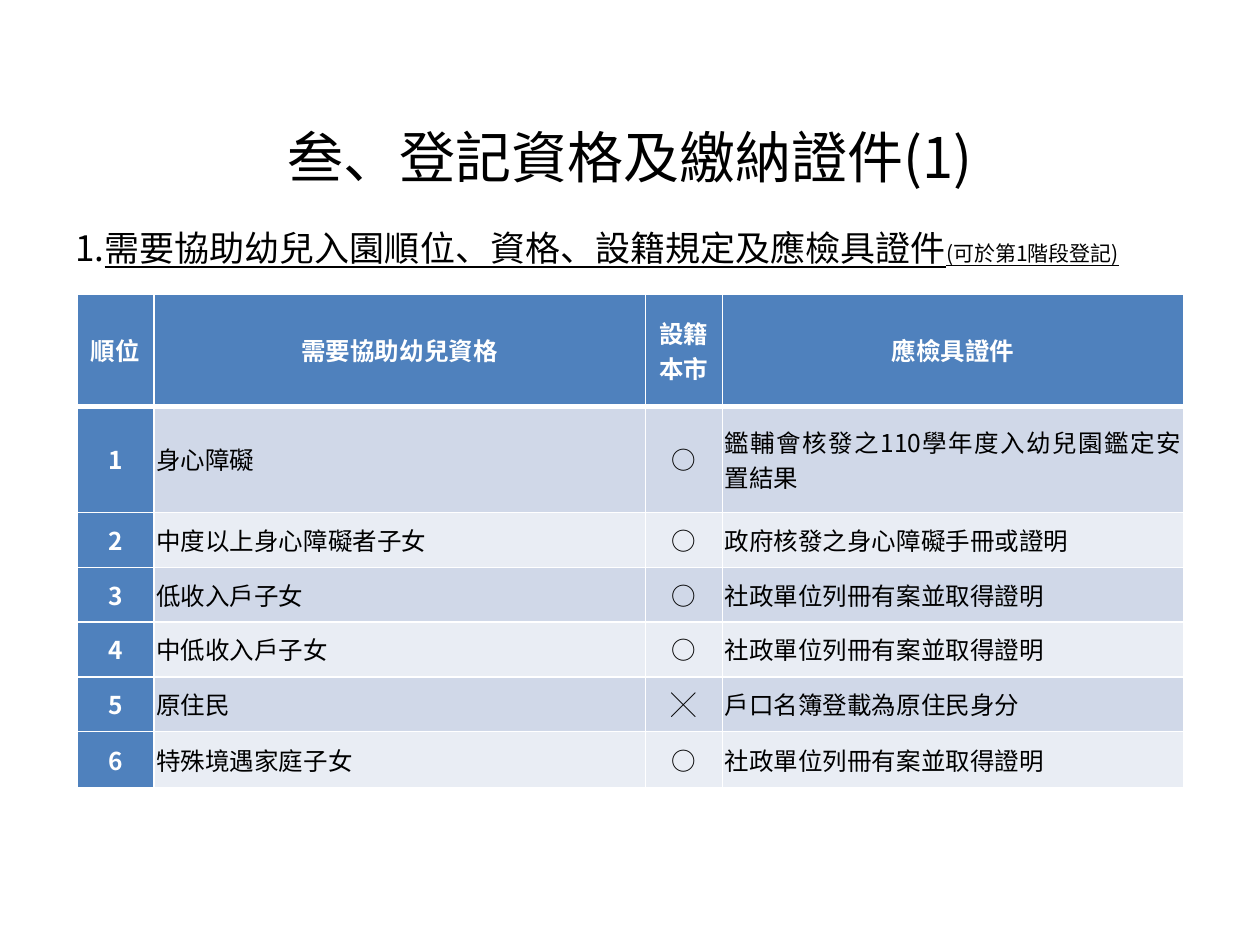
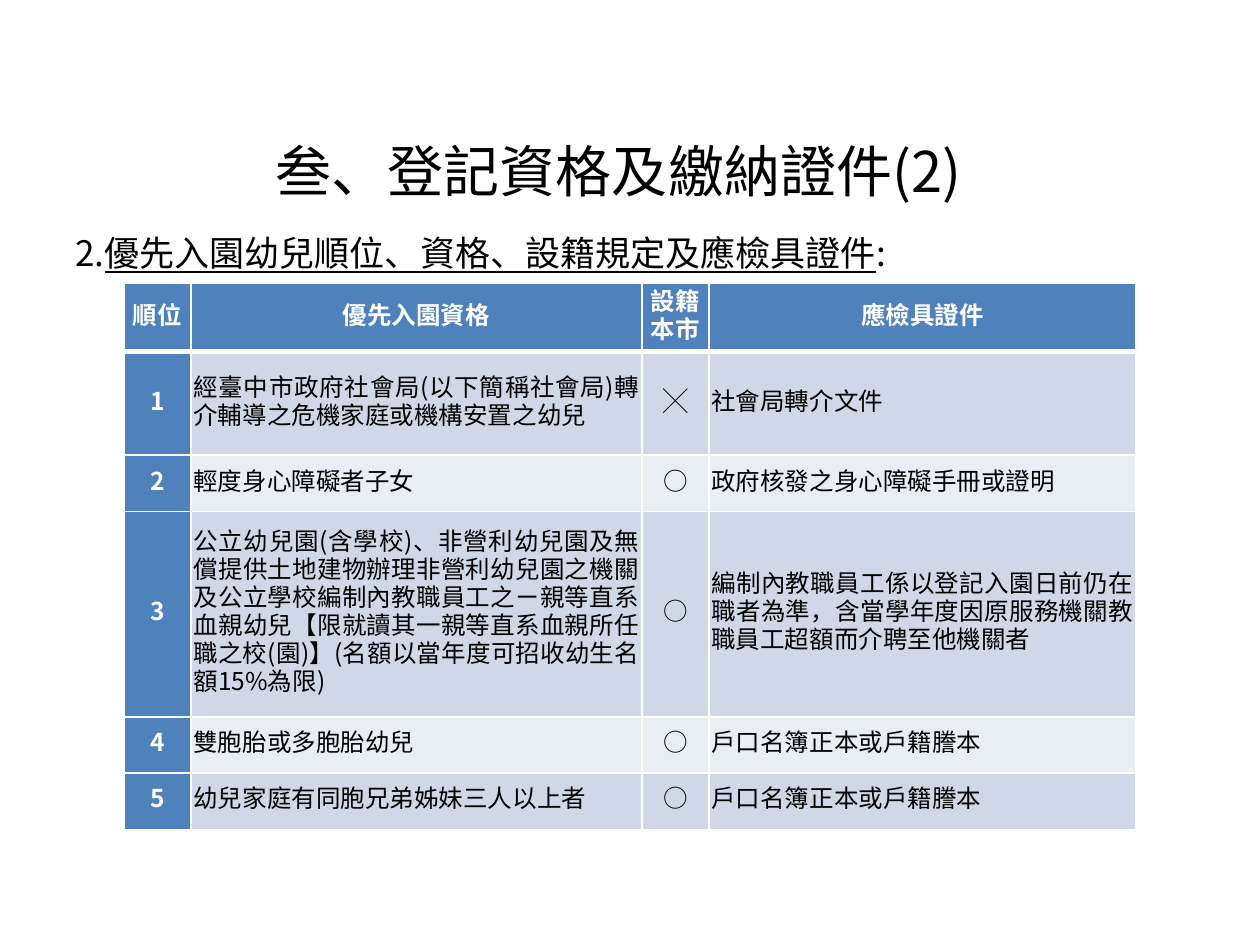
"""Build two slides listing kindergarten enrolment priorities and required documents."""
import lxml.etree
import pptx
import pptx.dml.color
import pptx.enum.text
import pptx.oxml.ns
import pptx.util

Cm = pptx.util.Cm
Pt = pptx.util.Pt
CENTER = pptx.enum.text.PP_ALIGN.CENTER
JUSTIFY = pptx.enum.text.PP_ALIGN.JUSTIFY
LEFT = pptx.enum.text.PP_ALIGN.LEFT
MIDDLE = pptx.enum.text.MSO_ANCHOR.MIDDLE
TOP = pptx.enum.text.MSO_ANCHOR.TOP
qn = pptx.oxml.ns.qn

FONT = "Noto Sans CJK SC"
BLACK, WHITE, BLUE = "000000", "FFFFFF", "4F81BD"
BANDS = ["E9EDF4", "D0D8E8"]


def color(hex_code):
    return pptx.dml.color.RGBColor.from_string(hex_code)


def add_text(frame, text, size, ink=BLACK, bold=False, underline=False,
             align=LEFT, anchor=TOP, spacing=None):
    frame.word_wrap = True
    frame.vertical_anchor = anchor
    paragraph = frame.paragraphs[0]
    paragraph.alignment = align
    paragraph.line_spacing = spacing
    run = paragraph.add_run()
    run.text = text
    run.font.size = Pt(size)
    run.font.bold = bold
    run.font.underline = underline
    run.font.color.rgb = color(ink)
    run.font.name = FONT
    lxml.etree.SubElement(run.font._element, qn("a:ea"), typeface=FONT)


pages = [
    {
        "title": "叁、登記資格及繳納證件(1)",
        "title_box": (1.27, 2.34, 22.86, 1.63),
        "heading": [("1.", 20, False),
                    ("需要協助幼兒入園順位、資格、設籍規定及應檢具證件", 20, True),
                    ("(可於第1階段登記)", 12, True)],
        "heading_top": 4.45,
        "table_at": (1.55, 5.93),
        "columns": [1.55, 9.91, 1.55, 9.3],
        "heights": [2.27, 2.13, 1.11, 1.1, 1.11, 1.1, 1.13],
        "spacing": 20,
        "rows": [
            ("順位", "需要協助幼兒資格", "設籍本市", "應檢具證件"),
            ("1", "身心障礙", "○", "鑑輔會核發之110學年度入幼兒園鑑定安置結果"),
            ("2", "中度以上身心障礙者子女", "○", "政府核發之身心障礙手冊或證明"),
            ("3", "低收入戶子女", "○", "社政單位列冊有案並取得證明"),
            ("4", "中低收入戶子女", "○", "社政單位列冊有案並取得證明"),
            ("5", "原住民", "╳", "戶口名簿登載為原住民身分"),
            ("6", "特殊境遇家庭子女", "○", "社政單位列冊有案並取得證明"),
        ],
    },
    {
        "title": "叁、登記資格及繳納證件(2)",
        "title_box": (2.77, 2.62, 19.41, 1.63),
        "heading": [("2.", 20, False),
                    ("優先入園幼兒順位、資格、設籍規定及應檢具證件", 20, True),
                    (":", 20, False)],
        "heading_top": 4.55,
        "table_at": (2.5, 5.72),
        "columns": [1.35, 9.09, 1.35, 8.61],
        "heights": [1.37, 2.08, 1.14, 4.14, 1.13, 1.14],
        "spacing": 16,
        "rows": [
            ("順位", "優先入園資格", "設籍本市", "應檢具證件"),
            ("1", "經臺中市政府社會局(以下簡稱社會局)轉介輔導之危機家庭或機構安置之幼兒",
             "╳", "社會局轉介文件"),
            ("2", "輕度身心障礙者子女", "○", "政府核發之身心障礙手冊或證明"),
            ("3", "公立幼兒園(含學校)、非營利幼兒園及無償提供土地建物辦理非營利幼兒園之"
                  "機關及公立學校編制內教職員工之ㄧ親等直系血親幼兒【限就讀其一親等直系血親"
                  "所任職之校(園)】(名額以當年度可招收幼生名額15%為限)",
             "○", "編制內教職員工係以登記入園日前仍在職者為準，含當學年度因原服務機關"
                  "教職員工超額而介聘至他機關者"),
            ("4", "雙胞胎或多胞胎幼兒", "○", "戶口名簿正本或戶籍謄本"),
            ("5", "幼兒家庭有同胞兄弟姊妹三人以上者", "○", "戶口名簿正本或戶籍謄本"),
        ],
    },
]

deck = pptx.Presentation()
deck.slide_width = Cm(25.4)
deck.slide_height = Cm(19.05)

for page in pages:
    slide = deck.slides.add_slide(deck.slide_layouts[6])

    title = slide.shapes.add_textbox(*map(Cm, page["title_box"]))
    add_text(title.text_frame, page["title"], 32, align=CENTER, anchor=MIDDLE)

    heading = slide.shapes.add_textbox(Cm(1.27), Cm(page["heading_top"]), Cm(22.86), Cm(1.2))
    for text, size, underline in page["heading"]:
        add_text(heading.text_frame, text, size, underline=underline)

    columns, heights = page["columns"], page["heights"]
    left, top = page["table_at"]
    priorities = slide.shapes.add_table(
        len(heights), len(columns), Cm(left), Cm(top), Cm(sum(columns)), Cm(sum(heights))).table
    for column, width in zip(priorities.columns, columns):
        column.width = Cm(width)
    for row, height in zip(priorities.rows, heights):
        row.height = Cm(height)

    for r, entries in enumerate(page["rows"]):
        for c, entry in enumerate(entries):
            cell = priorities.cell(r, c)
            cell.margin_left = cell.margin_right = Cm(0.05)
            cell.margin_top = cell.margin_bottom = 0
            is_header = r == 0 or c == 0
            add_text(cell.text_frame, entry, 14,
                     ink=WHITE if is_header else BLACK, bold=is_header,
                     align=CENTER if is_header or c == 2 else JUSTIFY,
                     spacing=Pt(page["spacing"]))
            cell.vertical_anchor = MIDDLE
            for side in "LRTB":
                thick = (r, side) in [(0, "B"), (1, "T")]
                border = lxml.etree.SubElement(
                    cell._tc.get_or_add_tcPr(), qn("a:ln" + side), w=str(Pt(3 if thick else 1)))
                paint = lxml.etree.SubElement(border, qn("a:solidFill"))
                lxml.etree.SubElement(paint, qn("a:srgbClr"), val=WHITE)
            cell.fill.solid()
            cell.fill.fore_color.rgb = color(BLUE if is_header else BANDS[r % 2])

deck.save("out.pptx")
